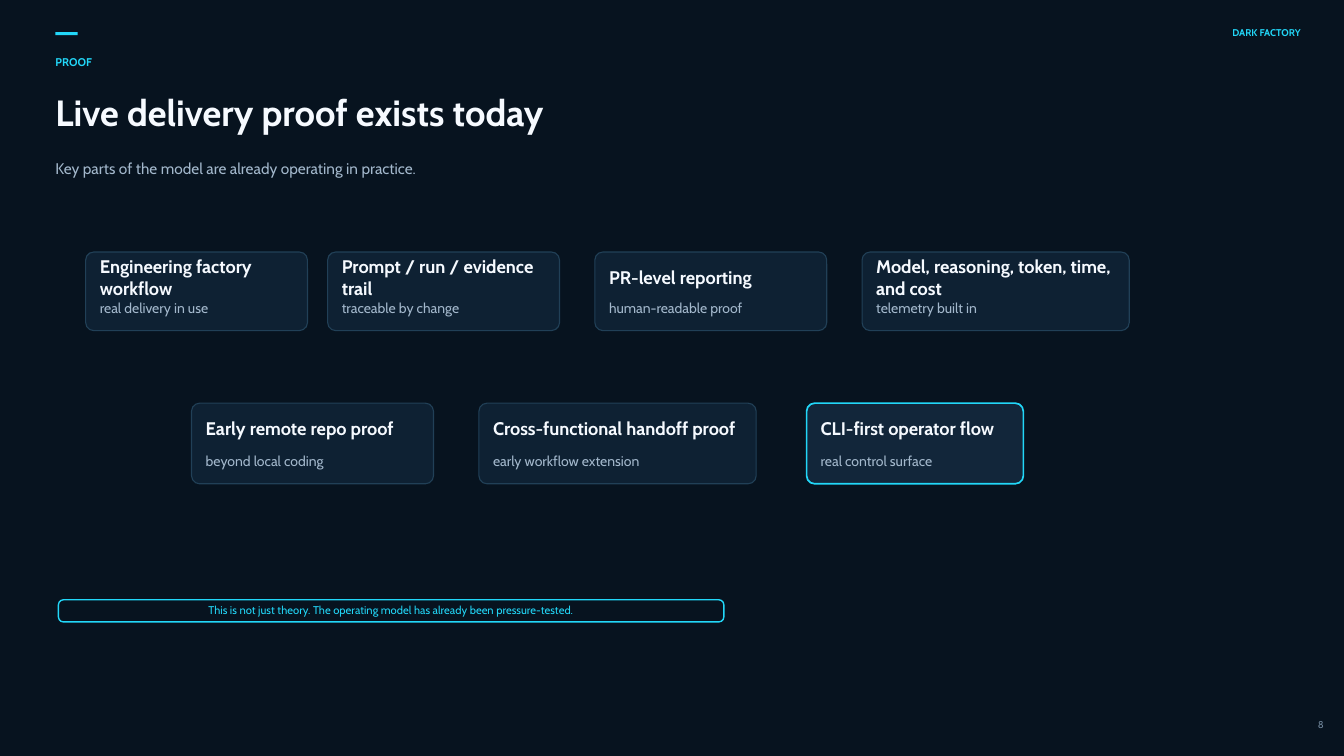
"""Build the delivery proof slide on a grid of tenth-of-an-inch cells."""
from dataclasses import dataclass

from pptx import Presentation
from pptx.dml.color import RGBColor
from pptx.enum.shapes import MSO_SHAPE
from pptx.enum.text import MSO_ANCHOR, PP_ALIGN
from pptx.shapes.autoshape import Shape
from pptx.slide import Slide
from pptx.util import Inches, Pt

NIGHT = RGBColor(0x07, 0x13, 0x1F)
NAVY = RGBColor(0x0E, 0x21, 0x33)
NAVY_LIGHT = RGBColor(0x12, 0x26, 0x3A)
STEEL = RGBColor(0x21, 0x40, 0x57)
CYAN = RGBColor(0x22, 0xD7, 0xF8)
WHITE = RGBColor(0xF6, 0xFA, 0xFF)
MIST = RGBColor(0xA3, 0xB8, 0xCC)
SLATE = RGBColor(0x6F, 0x85, 0x9A)

FONT = "Cabin"
CELL = Inches(0.1)
PADDING = 1.4
TITLE_ROWS = 4.4
DETAIL_ROWS = 1.7


@dataclass(frozen=True)
class Area:
    """A rectangle in grid columns and rows."""
    column: float
    row: float
    columns: float
    rows: float

    def lengths(self) -> list[int]:
        """Return left, top, width and height in EMU."""
        return [round(n * CELL) for n in (self.column, self.row, self.columns, self.rows)]


@dataclass(frozen=True)
class Label:
    """A line of text with its place and style."""
    text: str
    area: Area
    size: float
    color: RGBColor
    bold: bool = False
    align: PP_ALIGN = PP_ALIGN.LEFT


@dataclass(frozen=True)
class ProofCard:
    """A proof point with its horizontal extent."""
    title: str
    detail: str
    column: float
    columns: float
    highlighted: bool = False


@dataclass(frozen=True)
class CardRow:
    """Proof cards that share a top and a height."""
    row: float
    rows: float
    cards: tuple[ProofCard, ...]


LABELS = (
    Label("DARK FACTORY", Area(121, 2.5, 8, 1.4), 7, CYAN, True, PP_ALIGN.RIGHT),
    Label("8", Area(129.5, 71.2, 1.8, 1.4), 7, SLATE, align=PP_ALIGN.RIGHT),
    Label("PROOF", Area(5.5, 5.5, 21, 1.4), 8, CYAN, True),
    Label("Live delivery proof exists today", Area(5.5, 9, 63, 4.3), 26, WHITE, True),
    Label("Key parts of the model are already operating in practice.",
          Area(5.5, 15.8, 64, 1.8), 11, MIST),
)

CARD_ROWS = (
    CardRow(25, 7.8, (
        ProofCard("Engineering factory workflow", "real delivery in use", 8.5, 22),
        ProofCard("Prompt / run / evidence trail", "traceable by change", 32.5, 23),
        ProofCard("PR-level reporting", "human-readable proof", 59, 23),
        ProofCard("Model, reasoning, token, time, and cost", "telemetry built in", 85.5, 26.5),
    )),
    CardRow(40, 8, (
        ProofCard("Early remote repo proof", "beyond local coding", 19, 24),
        ProofCard("Cross-functional handoff proof", "early workflow extension", 47.5, 27.5),
        ProofCard("CLI-first operator flow", "real control surface", 80, 21.5, True),
    )),
)

TAKEAWAY = Label(
    "This is not just theory. The operating model has already been pressure-tested.",
    Area(7, 59.8, 63.6, 1.4), 8, CYAN, align=PP_ALIGN.CENTER)


def add_label(slide: Slide, label: Label) -> None:
    """Write a label in a text box without margins."""
    frame = slide.shapes.add_textbox(*label.area.lengths()).text_frame
    frame.word_wrap = True
    frame.vertical_anchor = MSO_ANCHOR.MIDDLE
    frame.margin_left = frame.margin_right = frame.margin_top = frame.margin_bottom = 0
    paragraph = frame.paragraphs[0]
    paragraph.text = label.text
    paragraph.alignment = label.align
    paragraph.font.name = FONT
    paragraph.font.size = Pt(label.size)
    paragraph.font.bold = label.bold
    paragraph.font.color.rgb = label.color


def add_block(slide: Slide, kind: MSO_SHAPE, area: Area, fill: RGBColor) -> Shape:
    """Draw a filled shape without shadow or outline."""
    block = slide.shapes.add_shape(kind, *area.lengths())
    block.shadow.inherit = False
    block.fill.solid()
    block.fill.fore_color.rgb = fill
    block.line.fill.background()
    return block


def add_panel(slide: Slide, area: Area, fill: RGBColor, border: RGBColor,
              weight: float, radius: float) -> None:
    """Draw an outlined panel with corners rounded by a radius in cells."""
    panel = add_block(slide, MSO_SHAPE.ROUNDED_RECTANGLE, area, fill)
    panel.adjustments[0] = radius / area.rows
    panel.line.color.rgb = border
    panel.line.width = Pt(weight)


def add_card(slide: Slide, card: ProofCard, band: CardRow) -> None:
    """Draw a proof card with its title and detail."""
    fill, border, weight = (NAVY_LIGHT, CYAN, 1.2) if card.highlighted else (NAVY, STEEL, 0.8)
    add_panel(slide, Area(card.column, band.row, card.columns, band.rows),
              fill, border, weight, 0.8)
    left, width = card.column + PADDING, card.columns - 2 * PADDING
    detail_row = band.row + band.rows - PADDING - DETAIL_ROWS
    add_label(slide, Label(card.title, Area(left, band.row + 0.3, width, TITLE_ROWS),
                           13, WHITE, True))
    add_label(slide, Label(card.detail, Area(left, detail_row, width, DETAIL_ROWS), 10, MIST))


def main() -> None:
    """Assemble and save the slide."""
    presentation = Presentation()
    presentation.slide_width, presentation.slide_height = Inches(13.33), Inches(7.5)
    slide = presentation.slides.add_slide(presentation.slide_layouts[6])
    slide.background.fill.solid()
    slide.background.fill.fore_color.rgb = NIGHT

    add_block(slide, MSO_SHAPE.RECTANGLE, Area(5.5, 3.2, 2.2, 0.3), CYAN)
    for label in LABELS:
        add_label(slide, label)
    for band in CARD_ROWS:
        for card in band.cards:
            add_card(slide, card, band)
    add_panel(slide, Area(5.8, 59.5, 66, 2.2), NIGHT, CYAN, 1, 0.5)
    add_label(slide, TAKEAWAY)

    presentation.save("out.pptx")


if __name__ == "__main__":
    main()
